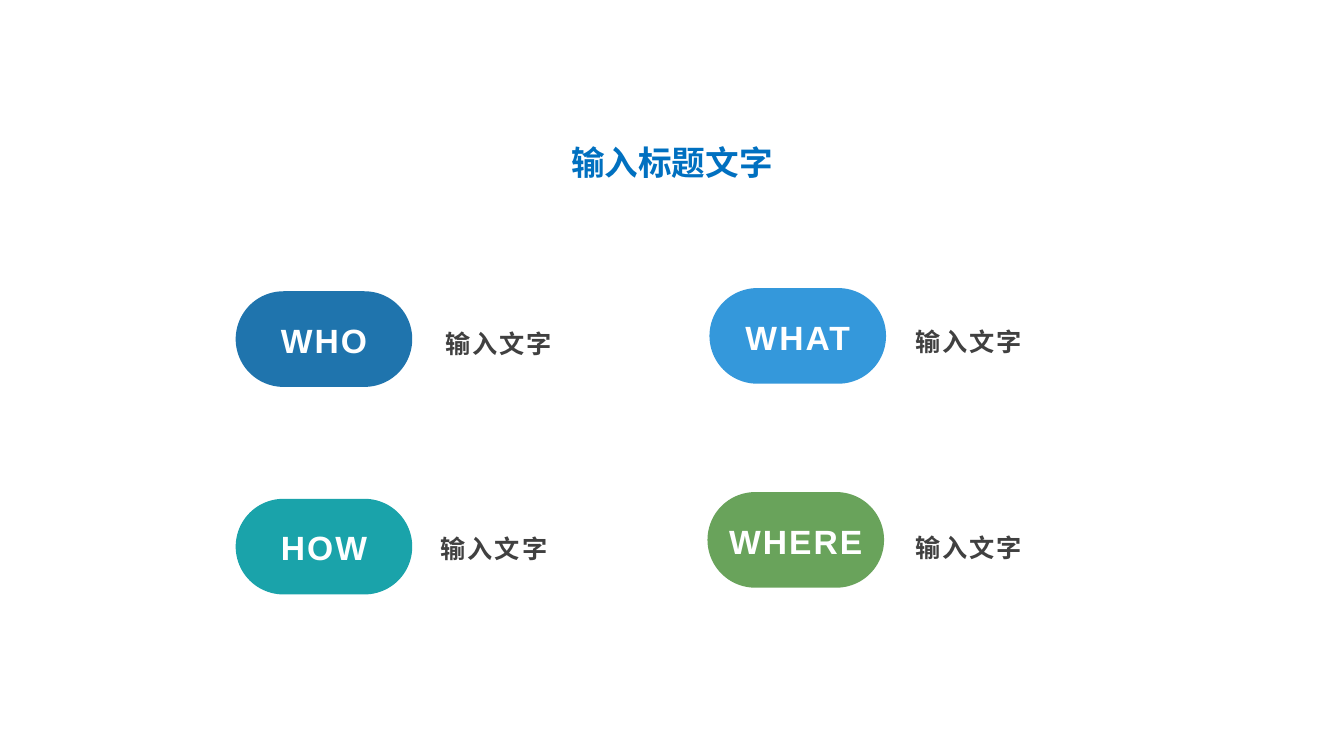
from typing import NamedTuple

from lxml.etree import SubElement
from pptx import Presentation
from pptx.dml.color import RGBColor as RGB
from pptx.enum.shapes import MSO_SHAPE as SHAPE
from pptx.enum.text import MSO_ANCHOR as ANCHOR, PP_ALIGN as ALIGN
from pptx.oxml.ns import qn
from pptx.slide import Slide
from pptx.text.text import TextFrame
from pptx.util import Cm, Pt

COLORS = {
    "blue": "1F74AD",
    "sky": "3498DB",
    "teal": "1AA3AA",
    "green": "69A35B",
    "white": "FFFFFF",
    "gray": "404040",
    "title": "0070C0",
}
LATIN = "Arial"
CJK = "Noto Sans CJK SC"
PILL_W, PILL_H = 4.45, 2.41
WORD_DROP, WORD_H = 0.59, 1.27
CAPTION_H = 1.14


class Box(NamedTuple):
    left: float
    top: float
    width: float
    height: float


class Question(NamedTuple):
    word: str
    color: str
    left: float
    top: float
    caption: str
    caption_left: float
    caption_top: float
    caption_width: float


QUESTIONS = [
    Question("WHO", "blue", 5.94, 7.34, "输入文字", 10.97, 7.9, 3.84),
    Question("WHAT", "sky", 17.88, 7.26, "输入文字", 22.81, 7.85, 3.84),
    Question("HOW", "teal", 5.94, 12.57, "输入文字", 10.85, 13.06, 5.92),
    Question("WHERE", "green", 17.83, 12.4, "输入文字", 22.81, 13.03, 5.92),
]


def add_text(s: Slide, box: Box, text: str, size: int, color: str,
             font: str = LATIN, align: ALIGN = ALIGN.CENTER,
             spacing: float = 0) -> TextFrame:
    tf = s.shapes.add_textbox(*map(Cm, box)).text_frame
    tf.word_wrap = True
    p = tf.paragraphs[0]
    p.alignment = align
    r = p.add_run()
    r.text = text
    r.font.size = Pt(size)
    r.font.bold = True
    r.font.name = font
    r.font.color.rgb = RGB.from_string(COLORS[color])
    props = r.font._element
    SubElement(props, qn("a:ea")).set("typeface", CJK)
    if spacing:
        props.set("spc", str(round(spacing * 100)))
    return tf


def add_pill(s: Slide, q: Question) -> None:
    box = Box(q.left, q.top, PILL_W, PILL_H)
    sp = s.shapes.add_shape(SHAPE.ROUNDED_RECTANGLE, *map(Cm, box))
    sp.adjustments[0] = 0.5
    sp.shadow.inherit = False
    sp.fill.solid()
    sp.fill.fore_color.rgb = RGB.from_string(COLORS[q.color])
    sp.line.fill.background()


def add_question(s: Slide, q: Question) -> None:
    add_pill(s, q)
    add_text(s, Box(q.left, q.top + WORD_DROP, PILL_W, WORD_H),
             q.word, 24, "white", spacing=1.5)
    tf = add_text(s, Box(q.caption_left, q.caption_top, q.caption_width, CAPTION_H),
                  q.caption, 18, "gray", align=ALIGN.LEFT, spacing=1.5)
    tf.vertical_anchor = ANCHOR.BOTTOM
    tf.margin_bottom = 0
    tf.paragraphs[0].line_spacing = 1.3


def main() -> None:
    prs = Presentation()
    prs.slide_width, prs.slide_height = Cm(33.87), Cm(19.05)
    s = prs.slides.add_slide(prs.slide_layouts[6])
    for q in QUESTIONS:
        add_question(s, q)
    add_text(s, Box(11.79, 3.45, 10.29, 1.27), "输入标题文字", 24, "title", font=CJK)
    prs.save("out.pptx")


if __name__ == "__main__":
    main()
